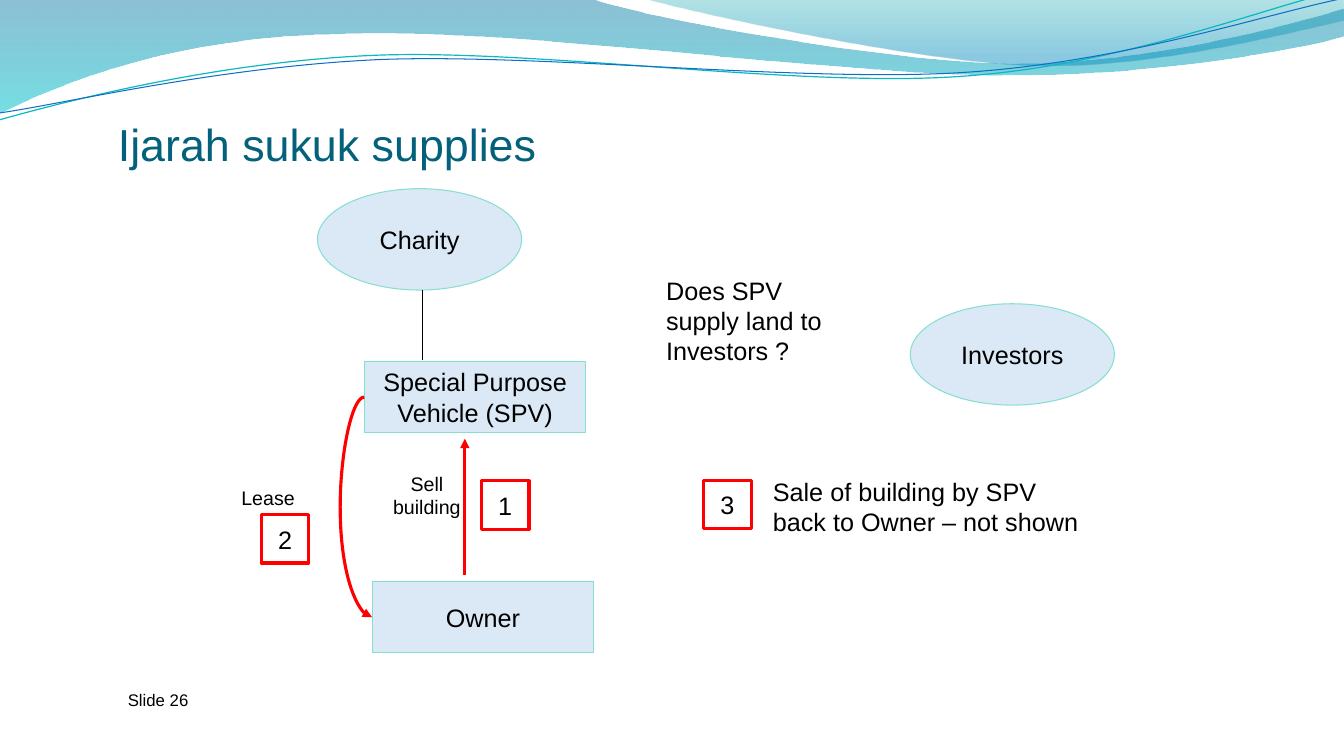
from lxml import etree
from pptx import Presentation
from pptx.dml.color import RGBColor
from pptx.enum.shapes import MSO_CONNECTOR, MSO_SHAPE
from pptx.enum.text import MSO_ANCHOR, PP_ALIGN
from pptx.oxml.ns import qn
from pptx.util import Pt

BLACK, RED, BLUE, MINT = "000000", "FF0000", "0F6FC6", "85DFD0"


def rgb(value):
    return RGBColor.from_string(value)


def set_opacity(fill_element, percents):
    for color, percent in zip(fill_element.iter(qn("a:srgbClr")), percents):
        etree.SubElement(color, qn("a:alpha"), val=str(percent * 1000))


def set_line(shape, color, width):
    shape.line.color.rgb = rgb(color)
    shape.line.width = Pt(width)


def write(shape, lines, size, color=BLACK, align=PP_ALIGN.LEFT,
          anchor=MSO_ANCHOR.TOP, wrap=True, insets=(7.2, 3.6, 7.2, 3.6)):
    frame = shape.text_frame
    frame.word_wrap = wrap
    frame.vertical_anchor = anchor
    (frame.margin_left, frame.margin_top,
     frame.margin_right, frame.margin_bottom) = map(Pt, insets)
    for index, line in enumerate(lines):
        paragraph = frame.add_paragraph() if index else frame.paragraphs[0]
        paragraph.alignment = align
        run = paragraph.add_run()
        run.text = line
        run.font.name = "Arial"
        run.font.size = Pt(size)
        run.font.color.rgb = rgb(color)


def add_text(slide, box, text, size, **style):
    write(slide.shapes.add_textbox(*map(Pt, box)), [text], size, **style)


def add_node(slide, kind, box, lines):
    shape = slide.shapes.add_shape(kind, *map(Pt, box))
    shape.shadow.inherit = False
    write(shape, lines, 18, align=PP_ALIGN.CENTER, anchor=MSO_ANCHOR.MIDDLE,
          wrap=False, insets=(5, 0, 5, 0))
    return shape


def add_party(slide, kind, box, *lines):
    shape = add_node(slide, kind, box, lines)
    shape.fill.solid()
    shape.fill.fore_color.rgb = rgb(BLUE)
    set_opacity(shape.element.spPr.find(qn("a:solidFill")), [15])
    set_line(shape, MINT, 0.75)


def add_step(slide, left, top, number):
    shape = add_node(slide, MSO_SHAPE.RECTANGLE, (left, top, 34, 34.5), [number])
    shape.fill.background()
    set_line(shape, RED, 2.25)


def add_link(slide, kind, start, end, color, width, arrow=False):
    link = slide.shapes.add_connector(kind, *map(Pt, (*start, *end)))
    set_line(link, color, width)
    if arrow:
        etree.SubElement(link.element.spPr.find(qn("a:ln")), qn("a:tailEnd"),
                         type="triangle")
    etree.SubElement(link.element.spPr, qn("a:effectLst"))
    return link


def add_wave(slide, start, segments, closed):
    """Add an outline whose segments hold one point (straight) or three (cubic)."""
    builder = slide.shapes.build_freeform(*map(Pt, start), scale=1.0)
    builder.add_line_segments(
        [(Pt(x), Pt(y)) for segment in segments for x, y in segment], close=closed)
    wave = builder.convert_to_shape()
    wave.shadow.inherit = False
    legs = iter(list(wave.element.spPr.iter(qn("a:lnTo"))))
    for segment in segments:
        first, *others = [next(legs) for _ in segment]
        if others:
            curve = etree.Element(qn("a:cubicBezTo"))
            first.addprevious(curve)
            for leg in (first, *others):
                curve.append(leg[0])
                leg.getparent().remove(leg)
    return wave


def add_band(slide, start, segments, stops):
    """Add a filled wave; stops are (position, colour, opacity) from the top."""
    band = add_wave(slide, start, segments, True)
    band.line.fill.background()
    band.fill.gradient()
    band.fill.gradient_angle = 270
    for stop, (position, color, _) in zip(band.fill.gradient_stops, stops):
        stop.position = position
        stop.color.rgb = rgb(color)
    set_opacity(band.element.spPr.find(qn("a:gradFill")), [stop[2] for stop in stops])


def add_strand(slide, start, segments, color, width):
    strand = add_wave(slide, start, segments, False)
    strand.fill.background()
    set_line(strand, color, width)


def draw_header(slide):
    add_band(slide, (0, 0), [
        [(422.6, -0.7)],
        [(456.5, 12.2), (637.2, 45.4), (727.9, 45.4)],
        [(819.4, 45.4), (920.2, 18.7), (959.8, 6.5)],
        [(961.2, 25.9)],
        [(943.9, 31.7), (835.2, 54.7), (715.7, 54)],
        [(596.9, 54), (366.5, 20.2), (247, 24.5)],
        [(123.8, 25.9), (43.9, 59.8), (-0.7, 81.4)],
    ], [(0, "0074A1", 45), (1, "00C6CF", 55)])
    add_band(slide, (460, -0.7), [
        [(488.9, 7.9), (654.5, 44.6), (738, 46.8)],
        [(821.5, 49.7), (923, 23), (959.8, 15.1)],
        [(959.8, 0)],
    ], [(0, "00A1A9", 30), (0.8, "008BBF", 45)])
    add_strand(slide, (-0.7, 85.7), [
        [(46, 72.7), (152, 44.6), (265.7, 39.6)],
        [(379.4, 34.6), (568.8, 62.6), (684, 54.7)],
        [(799.2, 47.5), (901.4, 5.8), (958.3, -7.2)],
    ], "0AB8BF", 0.85)
    add_strand(slide, (0, 80.6), [
        [(45.4, 74.2), (157, 47.5), (272.2, 42.5)],
        [(386.6, 38.2), (573.1, 59), (687.6, 51.8)],
        [(802.8, 44.6), (903.6, 10.1), (960.5, -1.4)],
    ], BLUE, 0.75)


def draw_structure(slide, left, top):
    """Draw the parties and the numbered steps from the charity's corner."""
    def place(x, y, *size):
        return (left + x, top + y, *size)

    add_link(slide, MSO_CONNECTOR.STRAIGHT, place(105.2, 275.8), place(105.2, 178.6),
             RED, 2.25, arrow=True)
    add_text(slide, place(42.5, 198.7, 71.3, 41), "Sell building", 14,
             align=PP_ALIGN.CENTER)
    add_party(slide, MSO_SHAPE.RECTANGLE, place(33.4, 123.4, 158.4, 50.6),
              "Special Purpose", "Vehicle (SPV)")
    add_party(slide, MSO_SHAPE.RECTANGLE, place(39, 280.8, 158.4, 50.6), "Owner")
    add_party(slide, MSO_SHAPE.OVAL, place(423.4, 82.2, 145.8, 72.4), "Investors")
    add_party(slide, MSO_SHAPE.OVAL, place(0, 0, 145.8, 72.4), "Charity")
    add_link(slide, MSO_CONNECTOR.STRAIGHT, place(75.2, 72.4), place(75.2, 122.2),
             BLACK, 0.75)
    lease = add_link(slide, MSO_CONNECTOR.CURVE, place(33.4, 148.8), place(39, 306.1),
                     RED, 2.25, arrow=True)
    guides = lease.element.spPr.find(qn("a:prstGeom")).get_or_add_avLst()
    etree.SubElement(guides, qn("a:gd"), name="adj1", fmla="val -306400")
    add_text(slide, place(-95.8, 208.6, 121, 24), "Lease", 14, align=PP_ALIGN.CENTER)
    add_step(slide, *place(117.1, 208.7), "1")
    add_step(slide, *place(-40.2, 232.9), "2")


def draw_notes(slide, left, top):
    add_text(slide, (left, top, 142, 73), "Does SPV supply land to Investors ?", 18)
    add_step(slide, left + 33.9, top + 150, "3")
    add_text(slide, (left + 76.3, top + 143.8, 235.5, 51),
             "Sale of building by SPV back to Owner – not shown", 18)


def main():
    presentation = Presentation()
    presentation.slide_width, presentation.slide_height = Pt(960), Pt(540)
    slide = presentation.slides.add_slide(presentation.slide_layouts[6])
    draw_header(slide)
    add_text(slide, (84.2, 80.2, 641, 41.8), "Ijarah sukuk supplies", 32,
             color="04617B", anchor=MSO_ANCHOR.BOTTOM, insets=(0, 3.6, 0, 0))
    draw_structure(slide, 226.8, 134.8)
    draw_notes(slide, 468.7, 193)
    add_text(slide, (84.2, 488.9, 168, 29), "Slide 26", 12)
    presentation.save("out.pptx")


if __name__ == "__main__":
    main()
